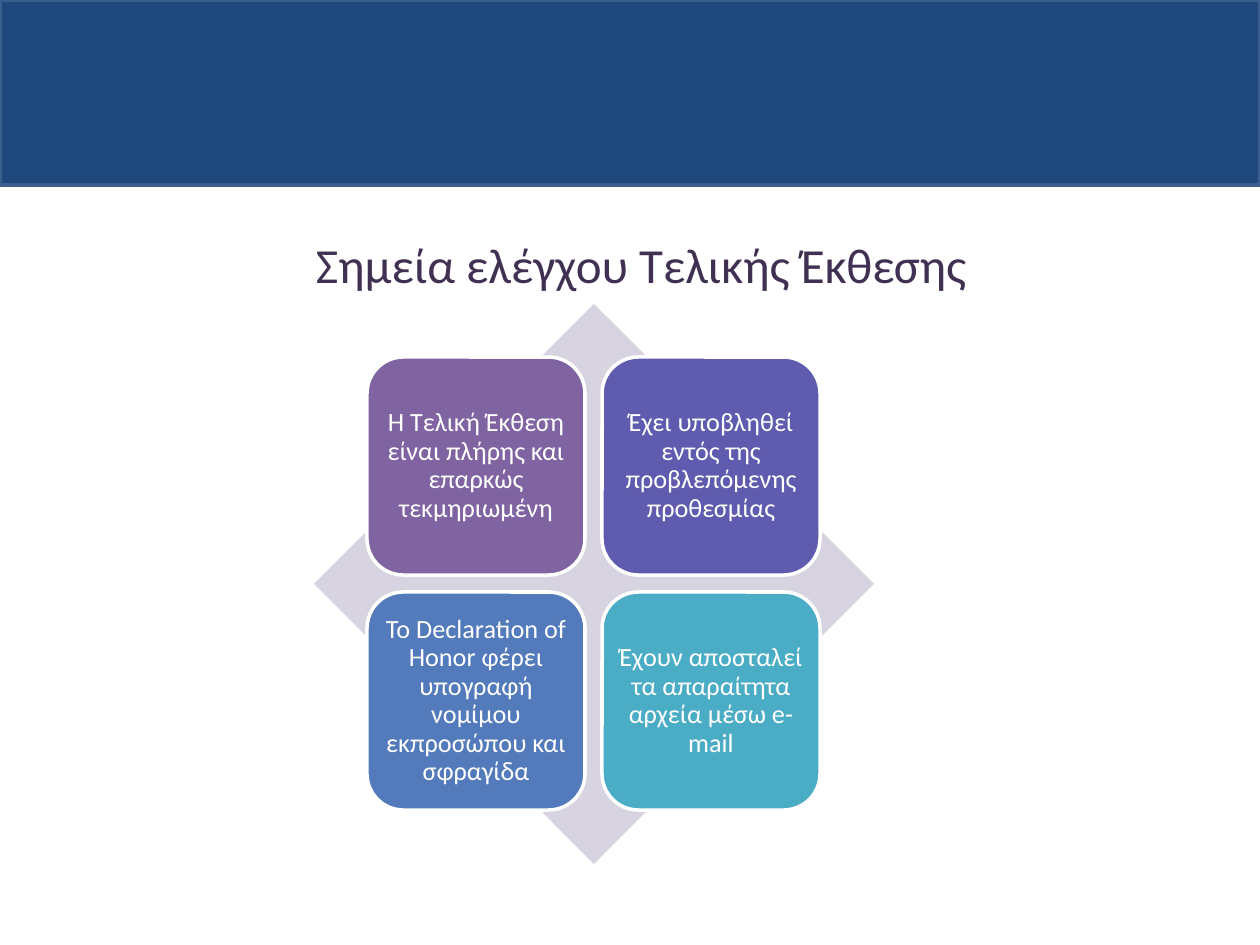
from pptx import Presentation
from pptx.dml.color import RGBColor
from pptx.enum.shapes import MSO_SHAPE
from pptx.enum.text import MSO_ANCHOR, PP_ALIGN
from pptx.util import Pt

PX = 914400 / 126
RECT, DIAMOND, ROUND = MSO_SHAPE.RECTANGLE, MSO_SHAPE.DIAMOND, MSO_SHAPE.ROUNDED_RECTANGLE
CENTER, MIDDLE = PP_ALIGN.CENTER, MSO_ANCHOR.MIDDLE
COLORS = {
    "band": "1F497D", "band_line": "3A5F8C", "title": "403152",
    "diamond": "D8D3E0", "white": "FFFFFF", "purple": "8064A2",
    "indigo": "5F5BAE", "blue": "537ABA", "teal": "4BACC6",
}
CHECKS = [
    ("purple", "Η Τελική Έκθεση είναι πλήρης και επαρκώς τεκμηριωμένη"),
    ("indigo", "Έχει υποβληθεί εντός της προβλεπόμενης προθεσμίας"),
    ("blue", "Το Declaration of Honor φέρει υπογραφή νομίμου εκπροσώπου και σφραγίδα"),
    ("teal", "Έχουν αποσταλεί τα απαραίτητα αρχεία μέσω e-mail"),
]


def px(n):
    """Turn pixels into EMU."""
    return round(n * PX)


def rgb(name):
    """Look up a named colour."""
    return RGBColor.from_string(COLORS[name])


def set_attrs(obj, values):
    """Set each attribute of an object from a dict."""
    for name, value in values.items():
        setattr(obj, name, value)


def set_text(sp, text, size, color, spacing=None, inset=None):
    """Write one centred paragraph into a shape."""
    tf = sp.text_frame
    tf.text = text
    set_attrs(tf, {"word_wrap": True, "vertical_anchor": MIDDLE})
    if inset is not None:
        set_attrs(tf, {f"margin_{side}": px(inset)
                       for side in ("left", "top", "right", "bottom")})
    p = tf.paragraphs[0]
    set_attrs(p, {"alignment": CENTER, "line_spacing": spacing})
    r = p.runs[0]
    set_attrs(r.font, {"name": "Calibri", "size": Pt(size)})
    r.font.color.rgb = rgb(color)


def add_block(s, kind, box, fill, line=None):
    """Add a filled preset shape with an optional outline."""
    sp = s.shapes.add_shape(kind, *map(px, box))
    sp.shadow.inherit = False
    sp.fill.solid()
    sp.fill.fore_color.rgb = rgb(fill)
    if line:
        sp.line.color.rgb = rgb(line)
        sp.line.width = Pt(2)
    else:
        sp.line.fill.background()
    return sp


def add_title(s, text):
    """Place and format the title placeholder."""
    sp = s.shapes.title
    set_attrs(sp, {"left": px(74), "top": px(185), "width": px(1134), "height": px(158)})
    set_text(sp, text, 28, "title")


def add_matrix(s):
    """Add the diamond and its two-by-two grid of checks."""
    add_block(s, DIAMOND, (314, 304, 560, 560), "diamond")
    size, step = 218, 235
    for i, (fill, text) in enumerate(CHECKS):
        row, col = divmod(i, 2)
        box = (367 + col * step, 357 + row * step, size, size)
        sp = add_block(s, ROUND, box, fill, "white")
        set_text(sp, text, 15, "white", 0.9, 0)


def main():
    """Build and save the slide."""
    prs = Presentation()
    set_attrs(prs, {"slide_width": px(1260), "slide_height": px(945)})
    s = prs.slides.add_slide(prs.slide_layouts[5])
    add_block(s, RECT, (0, 0, 1260, 185), "band", "band_line")
    add_title(s, "Σημεία ελέγχου Τελικής Έκθεσης")
    add_matrix(s)
    prs.save("out.pptx")


if __name__ == "__main__":
    main()
